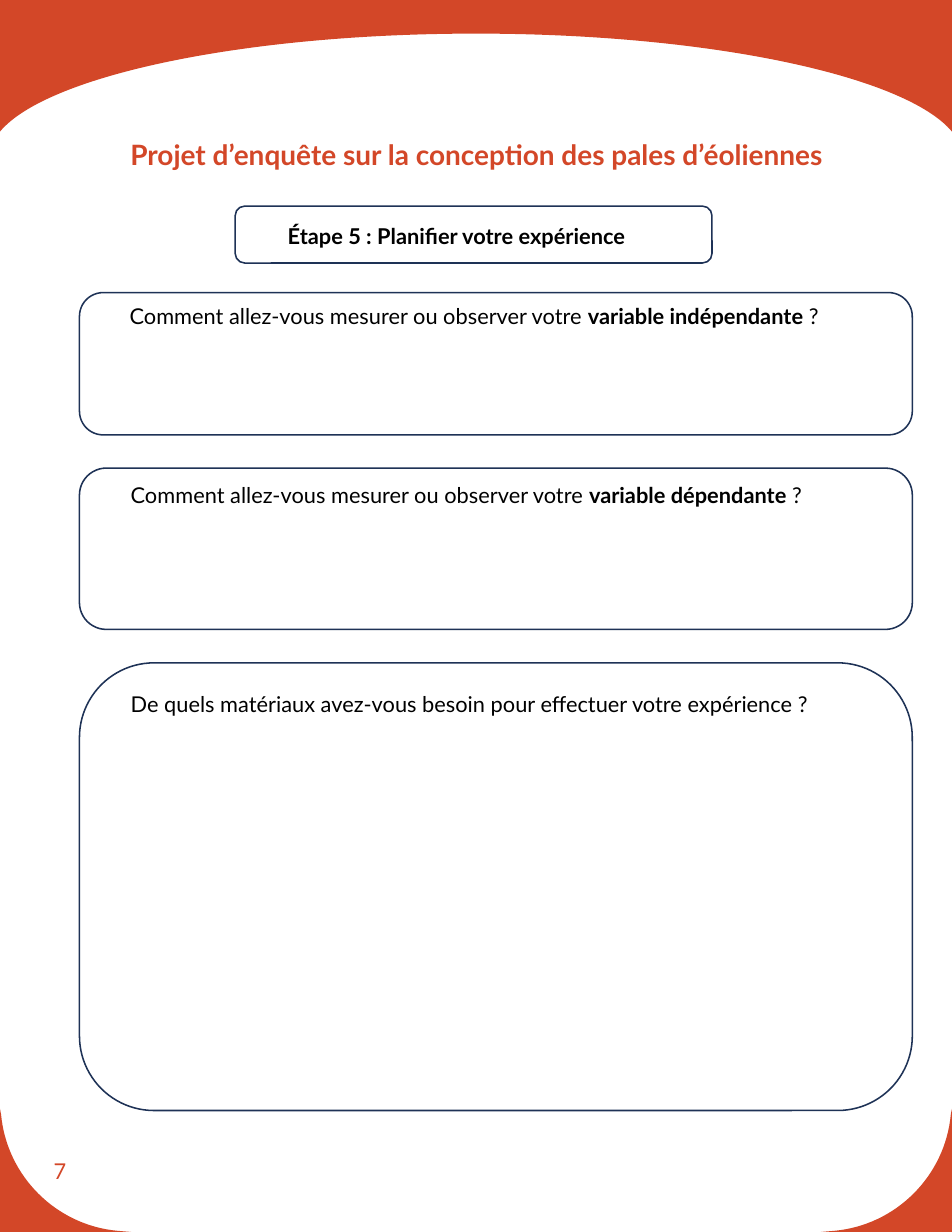
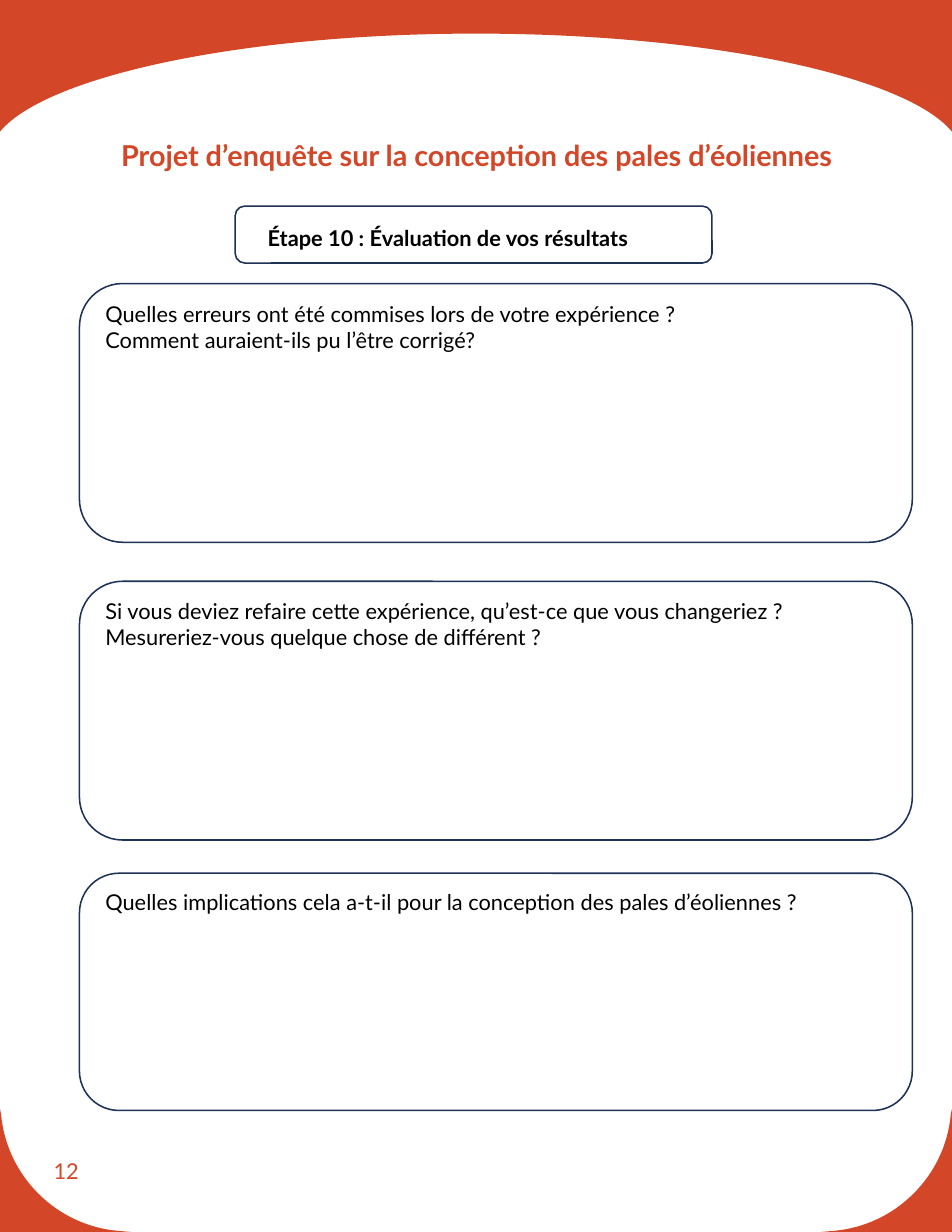
from dataclasses import dataclass
from lxml import etree
from pptx import Presentation
from pptx import util as u
from pptx.dml import color
from pptx.enum import shapes, text
from pptx.oxml import ns

Pt = u.Pt


@dataclass(frozen=True)
class Theme:
    red: str = "D34728"
    navy: str = "1E3256"
    black: str = "000000"
    font: str = "Lato"
    body: float = 14
    rule: float = 1
    wide: float = 612
    high: float = 792


def tint(code):
    return color.RGBColor.from_string(code)


class Sheet:
    def __init__(self, theme):
        self.theme = theme
        self.deck = Presentation()
        self.deck.slide_width = Pt(theme.wide)
        self.deck.slide_height = Pt(theme.high)
        self.layout = self.deck.slide_layouts[5]
        self.slide = None

    def page(self, number, title, size):
        first = self.slide is None
        self.slide = self.deck.slides.add_slide(self.layout)
        if first:
            self.frame()
        self.words(self.slide.shapes, (27.36, 731.52, 137.52, 42.48),
                   [[(number, False)]], self.theme.red, text.MSO_ANCHOR.MIDDLE)
        self.title(title, size)

    def frame(self):
        wide, high = self.theme.wide, self.theme.high
        self.band([[(0, 0)], [(wide, 0)], [(wide, 84.6)],
                   [(582.5, 49), (456.5, 21.6), (306, 21.6)],
                   [(155.5, 21.6), (29.5, 49), (0, 84.6)]])
        left = [[(0, 712.8)], [(0.72, 716.4)],
                [(4.32, 756), (36, 787.68), (75.6, 791.28)],
                [(84.24, high)], [(0, high)]]
        self.band(left)
        self.band([[(wide - x, y) for x, y in step] for step in left])

    def band(self, steps):
        ends = [(Pt(x), Pt(y)) for x, y in (step[-1] for step in steps)]
        pen = self.slide.shapes.build_freeform(*ends[0])
        pen.add_line_segments(ends[1:], close=True)
        shape = pen.convert_to_shape()
        lines = list(shape.element.iter(ns.qn("a:lnTo")))
        for line, step in zip(lines, steps[1:]):
            if len(step) == 3:
                line.tag = ns.qn("a:cubicBezTo")
                for n, (x, y) in enumerate(step[:2]):
                    spot = etree.Element(ns.qn("a:pt"))
                    spot.set("x", str(Pt(x) - shape.left))
                    spot.set("y", str(Pt(y) - shape.top))
                    line.insert(n, spot)
        shape.shadow.inherit = False
        shape.fill.solid()
        shape.fill.fore_color.rgb = tint(self.theme.red)
        shape.line.fill.background()
        self.layout.shapes.element.append(shape.element)

    def run(self, para, words, bold, ink, size):
        run = para.add_run()
        run.text = words
        font = run.font
        font.name = self.theme.font
        font.size = Pt(size)
        font.bold = bold
        font.color.rgb = tint(ink)

    def title(self, words, size):
        box = self.slide.shapes.title
        box.left, box.top, box.width, box.height = map(
            Pt, (25.92, 78.48, 560.88, 61.92))
        frame = box.text_frame
        frame.auto_size = text.MSO_AUTO_SIZE.NONE
        frame.vertical_anchor = text.MSO_ANCHOR.TOP
        para = frame.paragraphs[0]
        para.alignment = text.PP_ALIGN.CENTER
        para.line_spacing = 1.3
        self.run(para, words, True, self.theme.red, size)

    def words(self, home, place, lines, ink, anchor=text.MSO_ANCHOR.TOP):
        frame = home.add_textbox(*map(Pt, place)).text_frame
        frame.word_wrap = True
        frame.vertical_anchor = anchor
        for n, line in enumerate(lines):
            para = frame.add_paragraph() if n else frame.paragraphs[0]
            for part, bold in line:
                if part == "\n":
                    para.add_line_break()
                else:
                    self.run(para, part, bold, ink, self.theme.body)

    def panel(self, place, spot, lines):
        home = self.slide.shapes.add_group_shape().shapes
        box = home.add_shape(shapes.MSO_SHAPE.ROUNDED_RECTANGLE, *map(Pt, place))
        box.shadow.inherit = False
        box.fill.background()
        box.line.color.rgb = tint(self.theme.navy)
        box.line.width = Pt(self.theme.rule)
        rows = sum(1 + sum(part == "\n" for part, _ in line) for line in lines)
        self.words(home, (*spot, min(509.76, place[2]), 7.5 + 16.8 * rows),
                   lines, self.theme.black)

    def step(self, words, spot):
        self.panel((151.2, 132.48, 306.5, 36.6), spot, [[(words, True)]])

    def ask(self, top, height, spot, *lines):
        self.panel((51.1, top, 535.4, height), spot, lines)


def main():
    sheet = Sheet(Theme())
    head = "Projet d’enquête sur la conception des pales d’éoliennes"
    how = "Comment allez-vous mesurer ou observer votre "

    sheet.page("7", head, 18)
    sheet.step("Étape 5 : Planifier votre expérience", (177.84, 139.68))
    for top, height, spot, name in (
        (300.96, 103.68, (76.9, 306), "variable dépendante "),
        (188.1, 91.5, (76.2, 191.2), "variable indépendante "),
    ):
        sheet.ask(top, height, spot, [(how, False), (name, True), ("?", False)])
    sheet.ask(426.1, 287.8, (76.9, 440.64), [
        ("De quels matériaux avez-vous besoin pour effectuer votre expérience ?", False)])

    sheet.page("12", head, 18.5)
    sheet.step("Étape 10 : Évaluation de vos résultats", (164.88, 141.12))
    left = 60.6
    sheet.ask(182.3, 166.32, (left, 189.6),
              [("Quelles erreurs ont été commises lors de votre expérience ?", False)],
              [("Comment auraient-ils pu l’être corrigé?", False)])
    sheet.ask(373.7, 166.32, (left, 380.88), [
        ("Si vous deviez refaire cette expérience, qu’est-ce que vous changeriez ?", False),
        ("\n", False),
        ("Mesureriez-vous quelque chose de différent ?", False)])
    sheet.ask(561.4, 152.5, (left, 568.08), [
        ("Quelles implications cela a-t-il pour la conception des pales d’éoliennes ?", False)])
    sheet.deck.save("out.pptx")


if __name__ == "__main__":
    main()
